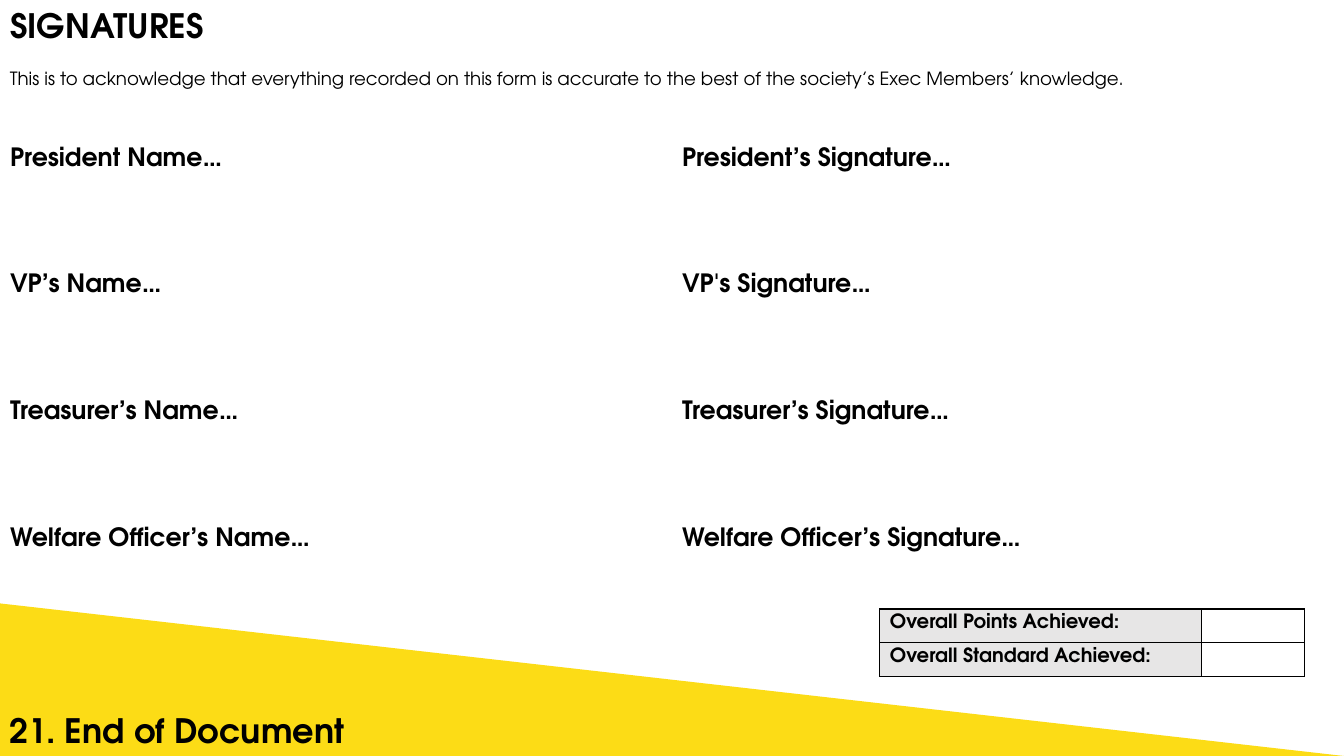
from lxml.etree import SubElement as Sub
from pptx import Presentation
from pptx.dml.color import RGBColor as RGB
from pptx.enum.shapes import MSO_SHAPE as Shape
from pptx.enum.text import MSO_ANCHOR as Anchor, MSO_AUTO_SIZE as Fit, PP_ALIGN as Align
from pptx.oxml.ns import qn
from pptx.util import Pt

FONT = "TeX Gyre Adventor"
COLORS = {"ink": "000000", "paper": "FFFFFF", "gold": "FCDC16", "gray": "E7E6E6"}
WIDE, HIGH = 960, 540


def write(frame, text, size, bold=True):
    frame.word_wrap = True
    para = frame.paragraphs[0]
    para.alignment = Align.LEFT
    run = para.add_run()
    run.text = text
    run.font.name = FONT
    run.font.size = Pt(size)
    run.font.bold = bold
    run.font.color.rgb = RGB.from_string(COLORS["ink"])


def edge(cell, color, low=1):
    props = cell._tc.get_or_add_tcPr()
    for side in ("lnL", "lnR", "lnT", "lnB"):
        width = low if side == "lnB" else 1
        line = Sub(props, qn(f"a:{side}"), w=str(Pt(width)))
        fill = Sub(line, qn("a:solidFill"))
        Sub(fill, qn("a:srgbClr"), val=COLORS[color])


deck = Presentation()
deck.slide_width, deck.slide_height = Pt(WIDE), Pt(HIGH)
slide = deck.slides.add_slide(deck.slide_layouts[5])
shapes = slide.shapes

# Title
title = shapes.title
title.left, title.top, title.width, title.height = Pt(0), Pt(0), Pt(WIDE), Pt(36)
title.text_frame.vertical_anchor = Anchor.TOP
title.text_frame.auto_size = Fit.NONE
write(title.text_frame, "SIGNATURES", 24)

# Statement under the title
note = shapes.add_textbox(Pt(0), Pt(44.7), Pt(WIDE), Pt(23))
write(
    note.text_frame,
    "This is to acknowledge that everything recorded on this form is accurate "
    "to the best of the society’s Exec Members’ knowledge.",
    13,
    bold=False,
)

# Yellow wedge and closing line
wedge = shapes.add_shape(Shape.RIGHT_TRIANGLE, Pt(0), Pt(431), Pt(WIDE), Pt(109))
wedge.shadow.inherit = False
wedge.fill.solid()
wedge.fill.fore_color.rgb = RGB.from_string(COLORS["gold"])
wedge.line.fill.background()

close = shapes.add_textbox(Pt(0), Pt(503.5), Pt(WIDE), Pt(36))
write(close.text_frame, "21. End of Document", 24)

# Names and signatures
roles = [
    ("President Name…", "President’s Signature…"),
    ("VP’s Name…", "VP's Signature…"),
    ("Treasurer’s Name…", "Treasurer’s Signature…"),
    ("Welfare Officer’s Name…", "Welfare Officer’s Signature…"),
]
signs = shapes.add_table(len(roles), 2, Pt(0), Pt(68.7), Pt(WIDE), Pt(361.6)).table
signs.first_row = signs.horz_banding = False
for r, pair in enumerate(roles):
    for c, label in enumerate(pair):
        cell = signs.cell(r, c)
        cell.vertical_anchor = Anchor.MIDDLE
        write(cell.text_frame, label, 18)
        edge(cell, "paper", 3 if r == 0 else 1)
        cell.fill.background()

# Overall result: the blank cells need no margins to keep the rows low
labels = ["Overall Points Achieved:", "Overall Standard Achieved:"]
total = shapes.add_table(len(labels), 2, Pt(628.4), Pt(435), Pt(303.4), Pt(48.2)).table
total.first_row = total.horz_banding = False
total.columns[0].width, total.columns[1].width = Pt(229.8), Pt(73.6)
for r, label in enumerate(labels):
    write(total.cell(r, 0).text_frame, label, 14)
    for c, (tint, pad) in enumerate((("gray", 3.6), ("paper", 0))):
        cell = total.cell(r, c)
        cell.margin_top = cell.margin_bottom = Pt(pad)
        edge(cell, "ink")
        cell.fill.solid()
        cell.fill.fore_color.rgb = RGB.from_string(COLORS[tint])

deck.save("out.pptx")
